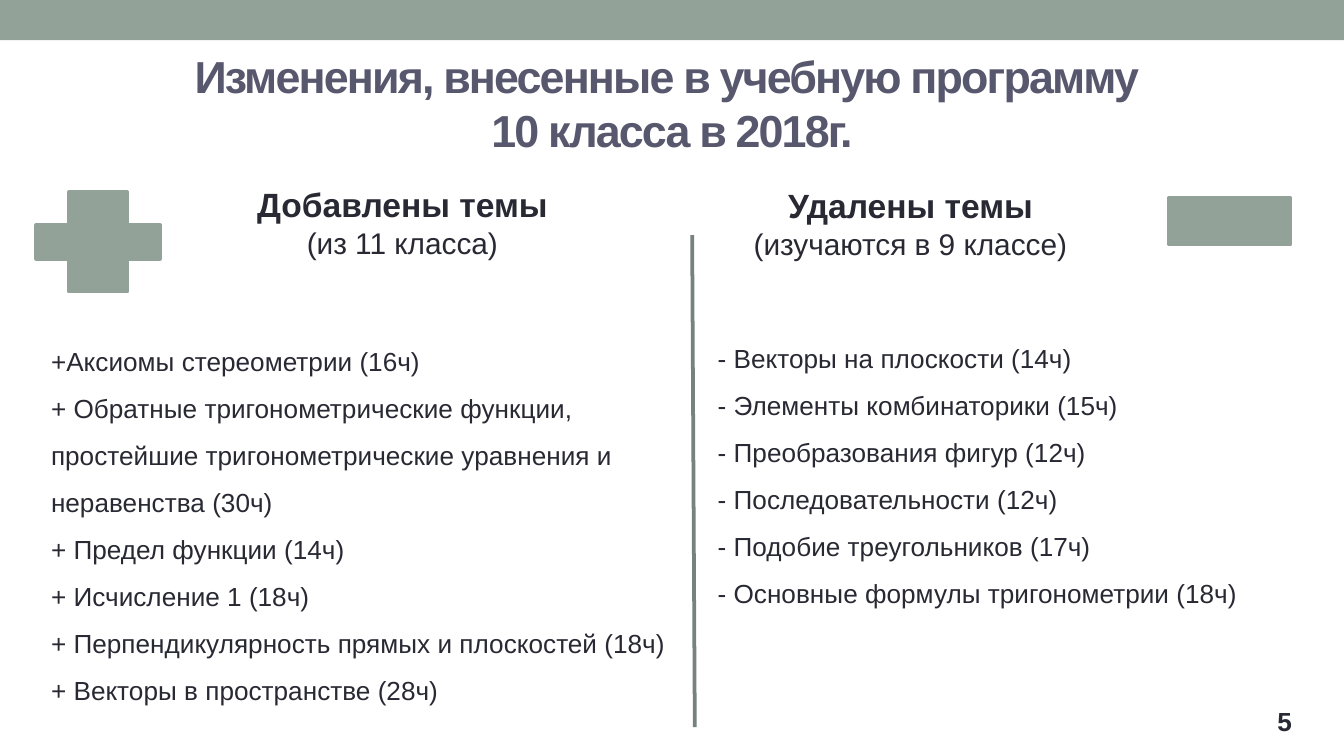
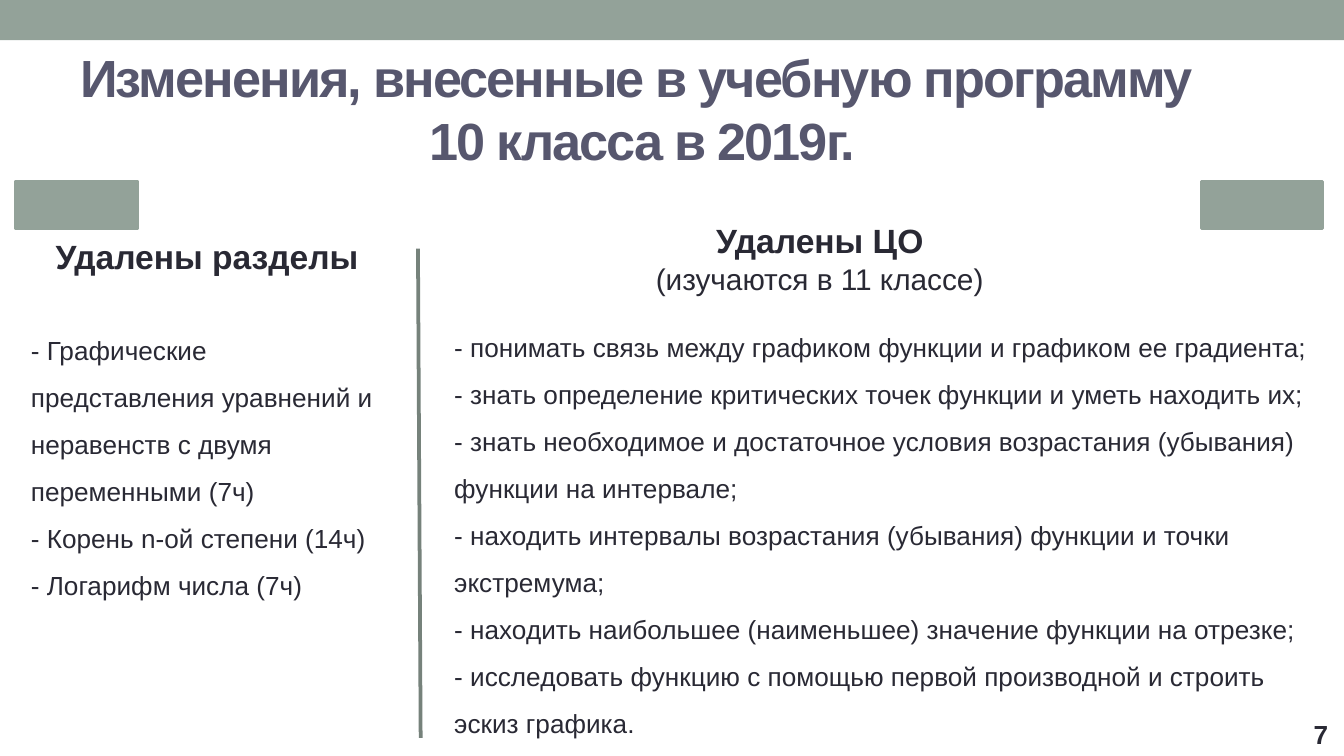
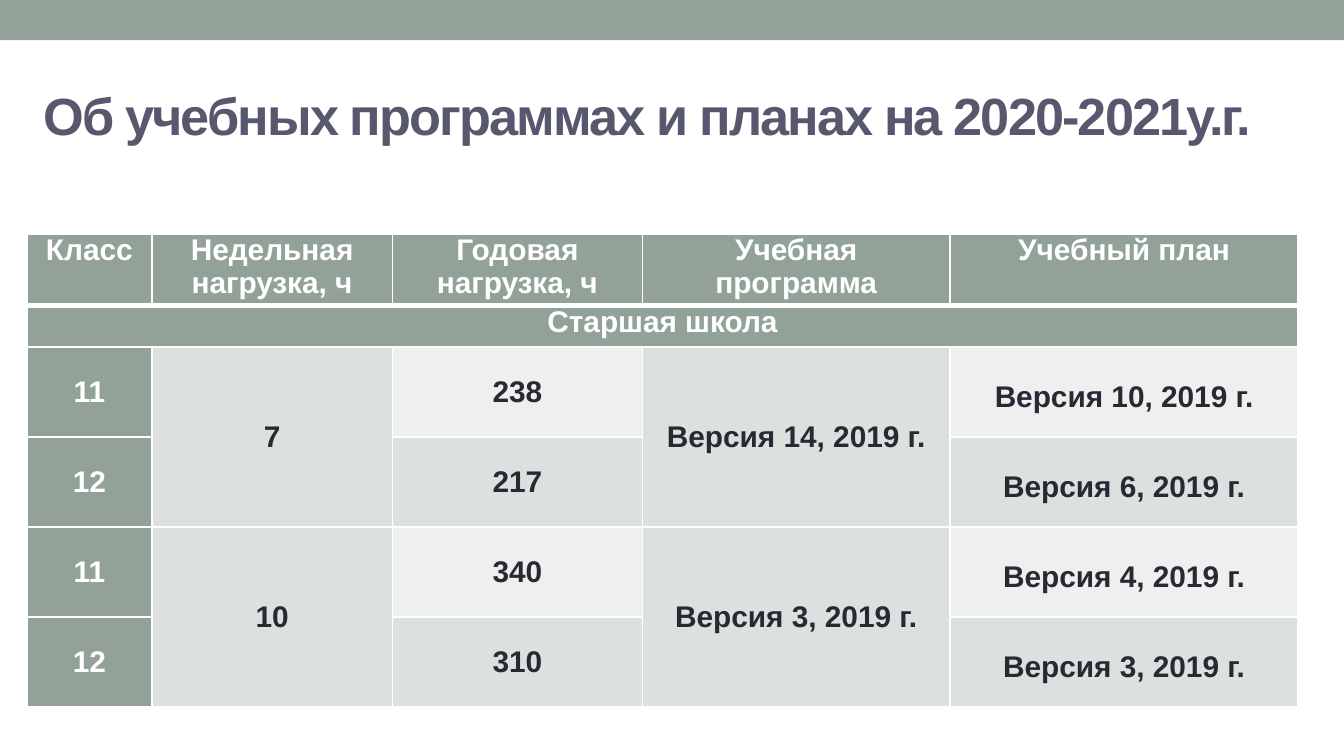
from dataclasses import dataclass

from lxml import etree
from pptx import Presentation
from pptx import util as u
from pptx.dml.color import RGBColor
from pptx.enum import shapes, text
from pptx.oxml import ns

COLS, ROWS = 100, 56.25
STEP = 0.1  # inches per column and per row

SAGE = RGBColor(0x93, 0xA2, 0x99)
SLATE = RGBColor(0x76, 0x82, 0x7B)
PLUM = RGBColor(0x57, 0x57, 0x6E)
INK = RGBColor(0x29, 0x29, 0x34)
WHITE = RGBColor(0xFF, 0xFF, 0xFF)
MIST = RGBColor(0xDC, 0xE0, 0xDE)
PALE = RGBColor(0xEE, 0xF0, 0xEF)

ALIGN = text.PP_ALIGN
MID = text.MSO_ANCHOR.MIDDLE
TOP = text.MSO_ANCHOR.TOP
FORM = shapes.MSO_SHAPE


@dataclass(frozen=True)
class Area:
    """Place on the grid, in columns and rows."""
    left: float
    top: float
    width: float
    height: float

    def emu(self) -> list[int]:
        return [grid(n) for n in (self.left, self.top, self.width, self.height)]


@dataclass(frozen=True)
class Style:
    size: int
    color: RGBColor = INK
    bold: bool = False
    align: ALIGN = ALIGN.LEFT
    space: float = 1.0
    track: int = 0  # hundredths of a point


@dataclass(frozen=True)
class Mark:
    form: FORM
    area: Area


@dataclass(frozen=True)
class Theme:
    """One half of a comparison: heading, remark and list."""
    head: str
    note: str
    top: Area
    body: Area
    items: tuple[str, ...]


@dataclass(frozen=True)
class Change:
    """A slide that compares two lists."""
    title: str
    size: int
    place: Area
    number: str
    corner: Area
    line: tuple[float, float, float, float]
    marks: tuple[Mark, ...]
    themes: tuple[Theme, ...]


BODY = Style(14, space=1.5)
HEAD = Style(18, bold=True, align=ALIGN.CENTER)
NOTE = Style(16, align=ALIGN.CENTER)
PAGE = Style(14, bold=True, align=ALIGN.RIGHT)

CHANGES = (
    Change(
        "Изменения, внесенные в учебную программу \v10 класса в 2018г.", 24,
        Area(5, 5.3, 90, 4.7), "5", Area(85.4, 52.3, 11.7, 2.7),
        (51.5, 17.5, 51.7, 54.1),
        (Mark(FORM.CROSS, Area(2.7, 14.3, 9.2, 7.4)),
         Mark(FORM.RECTANGLE, Area(87, 14.7, 9, 3.5))),
        (Theme("Добавлены темы", "(из 11 класса)",
               Area(13.8, 13.2, 32.3, 6.7), Area(3.5, 24.2, 48.3, 22),
               ("+Аксиомы стереометрии (16ч)",
                "+ Обратные тригонометрические функции, простейшие "
                "тригонометрические уравнения и неравенства (30ч)",
                "+ Предел функции (14ч)",
                "+ Исчисление 1 (18ч)",
                "+ Перпендикулярность прямых и плоскостей (18ч)",
                "+ Векторы в пространстве (28ч)")),
         Theme("Удалены темы", "(изучаются в 9 классе)",
               Area(51.6, 13.3, 32.3, 6.7), Area(53.1, 24, 44.8, 22.2),
               ("- Векторы на плоскости (14ч)",
                "- Элементы комбинаторики (15ч)",
                "- Преобразования фигур (12ч)",
                "- Последовательности (12ч)",
                "- Подобие треугольников (17ч)",
                "- Основные формулы тригонометрии (18ч)")))),
    Change(
        "Изменения, внесенные в учебную программу \v10 класса в 2019г.", 28,
        Area(2.8, 5.7, 90, 4.7), "7", Area(88.1, 53.3, 11.7, 2.7),
        (31.1, 18.5, 31.3, 54.9),
        (Mark(FORM.RECTANGLE, Area(1.2, 13.5, 9, 3.5)),
         Mark(FORM.RECTANGLE, Area(89.4, 13.5, 9, 3.5))),
        (Theme("Удалены разделы ", "",
               Area(1.2, 17.1, 29.1, 4), Area(2, 23.4, 27.4, 22),
               ("- Графические представления уравнений и неравенств "
                "с двумя переменными (7ч)",
                "- Корень n-ой степени (14ч)",
                "- Логарифм числа (7ч)")),
         Theme("Удалены ЦО", "(изучаются в 11 классе)",
               Area(42.1, 15.9, 37.8, 6.7), Area(33.5, 23.2, 65.6, 22.2),
               ("- понимать связь между графиком функции и графиком ее градиента;",
                "- знать определение критических точек функции и уметь находить их;",
                "- знать необходимое и достаточное условия возрастания "
                "(убывания) функции на интервале;",
                "- находить интервалы возрастания (убывания) функции "
                "и точки экстремума;",
                "- находить наибольшее (наименьшее) значение функции на отрезке;",
                "- исследовать функцию с помощью первой производной "
                "и строить эскиз графика.")))),
)

WIDTHS = (9.3, 17.9, 18.6, 22.9, 25.9)
HEIGHTS = (4.9, 3.1) + (6.7,) * 4
LOADS = (
    ("Класс", "Недельная нагрузка, ч", "Годовая нагрузка, ч",
     "Учебная программа", "Учебный план"),
    ("Старшая школа", "", "", "", ""),
    ("11", "7", "238", "Версия 14, 2019 г.", "Версия 10, 2019 г."),
    ("12", "", "217", "", "Версия 6, 2019 г."),
    ("11", "10", "340", "Версия 3, 2019 г.", "Версия 4, 2019 г."),
    ("12", "", "310", "", "Версия 3, 2019 г."),
)
SPANS = ((1, 0, 1, 4),) + tuple((r, c, r + 1, c) for r in (2, 4) for c in (1, 3))


def grid(count: float) -> int:
    return u.Inches(round(count * STEP, 4))


def apply(target, values: dict) -> None:
    for name, value in values.items():
        setattr(target, name, value)


def write(para, words: str, style: Style) -> None:
    para.text = words
    apply(para, {"alignment": style.align, "line_spacing": style.space})
    for run in para.runs:
        apply(run.font, {"name": "Arial", "size": u.Pt(style.size), "bold": style.bold})
        run.font.color.rgb = style.color
        if style.track:
            run._r.get_or_add_rPr().set("spc", str(style.track))


def add_text(slide, area: Area, lines: list[tuple[str, Style]],
             anchor=TOP, inset: float | None = None) -> None:
    frame = slide.shapes.add_textbox(*area.emu()).text_frame
    apply(frame, {"word_wrap": True, "vertical_anchor": anchor})
    if inset is not None:
        sides = ("left", "top", "right", "bottom")
        apply(frame, {f"margin_{side}": grid(inset) for side in sides})
    for i, (words, style) in enumerate(lines):
        write(frame.add_paragraph() if i else frame.paragraphs[0], words, style)


def add_mark(slide, mark: Mark, edge: bool = True) -> None:
    shape = slide.shapes.add_shape(mark.form, *mark.area.emu())
    shape.shadow.inherit = False
    shape.fill.solid()
    shape.fill.fore_color.rgb = SAGE
    if edge:
        shape.line.color.rgb = SAGE
        shape.line.width = u.Pt(2)
    else:
        shape.line.fill.background()
    if mark.form == FORM.CROSS:
        shape.adjustments[0] = 0.33


def add_line(slide, ends: tuple[float, float, float, float]) -> None:
    line = slide.shapes.add_connector(
        shapes.MSO_CONNECTOR.STRAIGHT, *(grid(n) for n in ends))
    line.line.color.rgb = SLATE
    line.line.width = u.Pt(2)
    etree.SubElement(line._element.spPr, ns.qn("a:effectLst"))


def add_slide(deck, title: str, size: int, place: Area):
    """Start a slide with the top band and its title."""
    slide = deck.slides.add_slide(deck.slide_layouts[6])
    add_mark(slide, Mark(FORM.RECTANGLE, Area(0, 0, COLS, 3)), edge=False)
    style = Style(size, PLUM, True, ALIGN.CENTER, track=-100)
    add_text(slide, place, [(title, style)], MID)
    return slide


def add_change(deck, change: Change) -> None:
    slide = add_slide(deck, change.title, change.size, change.place)
    for mark in change.marks:
        add_mark(slide, mark)
    add_line(slide, change.line)
    for theme in change.themes:
        lines = [(theme.head, HEAD)]
        if theme.note:
            lines.append((theme.note, NOTE))
        add_text(slide, theme.top, lines)
        add_text(slide, theme.body, [(item, BODY) for item in theme.items], inset=0.3)
    add_text(slide, change.corner, [(change.number, PAGE)], MID)


def edge_cell(cell, row: int) -> None:
    """Rule the cell in white, thicker under the header row."""
    props = cell._tc.get_or_add_tcPr()
    for i, side in enumerate("LRTB"):
        thick = (side == "B" and row == 0) or (side == "T" and row == 1)
        line = etree.Element(ns.qn(f"a:ln{side}"), w=str(u.Pt(3 if thick else 1)))
        fill = etree.SubElement(line, ns.qn("a:solidFill"))
        etree.SubElement(fill, ns.qn("a:srgbClr"), val=str(WHITE))
        props.insert(i, line)


def shade(row: int, col: int) -> RGBColor:
    if row < 2 or col == 0:
        return SAGE
    return MIST if row % 2 or col in (1, 3) else PALE


def add_loads(slide) -> None:
    area = Area(2, 17.4, sum(WIDTHS), sum(HEIGHTS))
    table = slide.shapes.add_table(len(HEIGHTS), len(WIDTHS), *area.emu()).table
    apply(table, {"first_row": False, "horz_banding": False})
    for col, width in zip(table.columns, WIDTHS):
        col.width = grid(width)
    for row, height in zip(table.rows, HEIGHTS):
        row.height = grid(height)
    for r, line in enumerate(LOADS):
        for c, words in enumerate(line):
            cell, color = table.cell(r, c), shade(r, c)
            low = r > 1 and c == 4
            apply(cell, {"margin_left": grid(0.7), "margin_right": grid(0.7),
                         "margin_top": grid(0.8 if low else 0), "margin_bottom": 0,
                         "vertical_anchor": MID if r > 1 else TOP})
            cell.fill.solid()
            cell.fill.fore_color.rgb = color
            edge_cell(cell, r)
            ink = WHITE if color == SAGE else INK
            write(cell.text_frame.paragraphs[0], words,
                  Style(16, ink, True, ALIGN.CENTER))
    for top, left, end, right in SPANS:
        table.cell(top, left).merge(table.cell(end, right))


def main() -> None:
    deck = Presentation()
    apply(deck, {"slide_width": grid(COLS), "slide_height": grid(ROWS)})
    for change in CHANGES:
        add_change(deck, change)
    add_loads(add_slide(deck, "Об учебных программах и планах на 2020-2021у.г.",
                        28, Area(1.2, 4.5, 93.9, 8.1)))
    deck.save("out.pptx")


if __name__ == "__main__":
    main()
